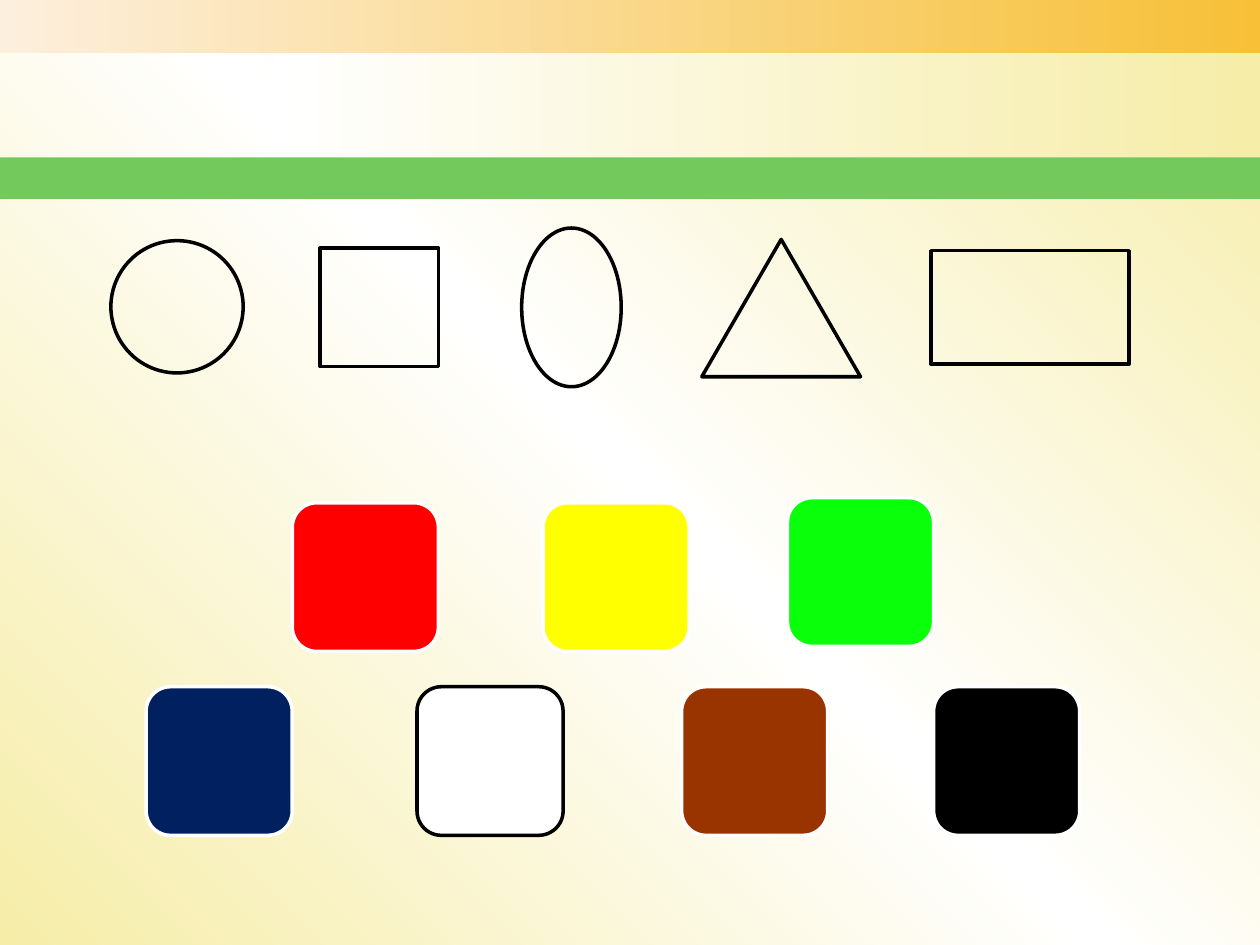
"""Build a slide of outlined shapes above two rows of colour tiles."""
from copy import deepcopy
from dataclasses import dataclass
from typing import Optional

from pptx import Presentation
from pptx.dml.color import RGBColor
from pptx.dml.fill import FillFormat
from pptx.enum.shapes import MSO_SHAPE
from pptx.oxml.ns import qn
from pptx.util import Inches, Pt


@dataclass(frozen=True)
class Theme:
    cream: str = "F6EDA8"
    white: str = "FFFFFF"
    black: str = "000000"
    peach: str = "FDEFDD"
    amber: str = "F7C037"
    leaf: str = "73C95B"
    red: str = "FF0000"
    yellow: str = "FFFF00"
    lime: str = "0AFF0A"
    navy: str = "002060"
    brown: str = "993300"
    line_width: float = 2


@dataclass(frozen=True)
class Figure:
    kind: MSO_SHAPE
    left: float
    top: float
    width: float
    height: float
    fill: tuple[str, ...] = ()
    line: Optional[str] = None


THEME = Theme()
TILE_W, TILE_H = 1.16, 1.18

BANDS = [
    Figure(MSO_SHAPE.RECTANGLE, 0, 0, 10, 0.42, (THEME.peach, THEME.amber)),
    Figure(MSO_SHAPE.RECTANGLE, 2.17, 0.42, 7.83, 0.83, (THEME.white, THEME.cream)),
    Figure(MSO_SHAPE.RECTANGLE, 0, 1.25, 10, 0.33, (THEME.leaf,)),
]
OUTLINES = [
    Figure(kind, *box, line=THEME.black)
    for kind, *box in (
        (MSO_SHAPE.OVAL, 0.88, 1.91, 1.05, 1.05),
        (MSO_SHAPE.RECTANGLE, 2.54, 1.97, 0.94, 0.94),
        (MSO_SHAPE.OVAL, 4.14, 1.81, 0.79, 1.26),
        (MSO_SHAPE.ISOSCELES_TRIANGLE, 5.57, 1.9, 1.26, 1.09),
        (MSO_SHAPE.RECTANGLE, 7.39, 1.99, 1.57, 0.9),
    )
]
TILES = [
    Figure(MSO_SHAPE.ROUNDED_RECTANGLE, left, top, TILE_W, TILE_H, (colour,),
           THEME.black if colour == THEME.white else THEME.white)
    for left, top, colour in (
        (2.32, 3.99, THEME.red),
        (4.31, 3.99, THEME.yellow),
        (6.25, 3.95, THEME.lime),
        (1.16, 5.45, THEME.navy),
        (3.31, 5.45, THEME.white),
        (5.41, 5.45, THEME.brown),
        (7.41, 5.45, THEME.black),
    )
]


def set_gradient(fill: FillFormat, element, colours: tuple[str, ...], angle: float) -> None:
    """Spread the colours evenly along a linear gradient."""
    fill.gradient()
    fill.gradient_angle = angle
    stops = element.find(".//" + qn("a:gsLst"))
    for _ in colours[2:]:
        stops.append(deepcopy(stops[-1]))
    for i, (stop, colour) in enumerate(zip(fill.gradient_stops, colours)):
        stop.position = i / (len(colours) - 1)
        stop.color.rgb = RGBColor.from_string(colour)


def draw_figure(s, figure: Figure) -> None:
    """Draw one preset shape with its fill and line."""
    sp = s.shapes.add_shape(figure.kind, Inches(figure.left), Inches(figure.top),
                            Inches(figure.width), Inches(figure.height))
    sp.shadow.inherit = False
    if len(figure.fill) > 1:
        set_gradient(sp.fill, sp.element, figure.fill, 0)
    elif figure.fill:
        sp.fill.solid()
        sp.fill.fore_color.rgb = RGBColor.from_string(figure.fill[0])
    else:
        sp.fill.background()
    if figure.line:
        sp.line.color.rgb = RGBColor.from_string(figure.line)
        sp.line.width = Pt(THEME.line_width)
    else:
        sp.line.fill.background()


def main() -> None:
    """Build and save the slide."""
    prs = Presentation()
    for name, value in {"slide_width": Inches(10), "slide_height": Inches(7.5)}.items():
        setattr(prs, name, value)
    s = prs.slides.add_slide(prs.slide_layouts[6])
    set_gradient(s.background.fill, s.element, (THEME.cream, THEME.white, THEME.cream), 45)
    for figure in BANDS + OUTLINES + TILES:
        draw_figure(s, figure)
    prs.save("out.pptx")


if __name__ == "__main__":
    main()
